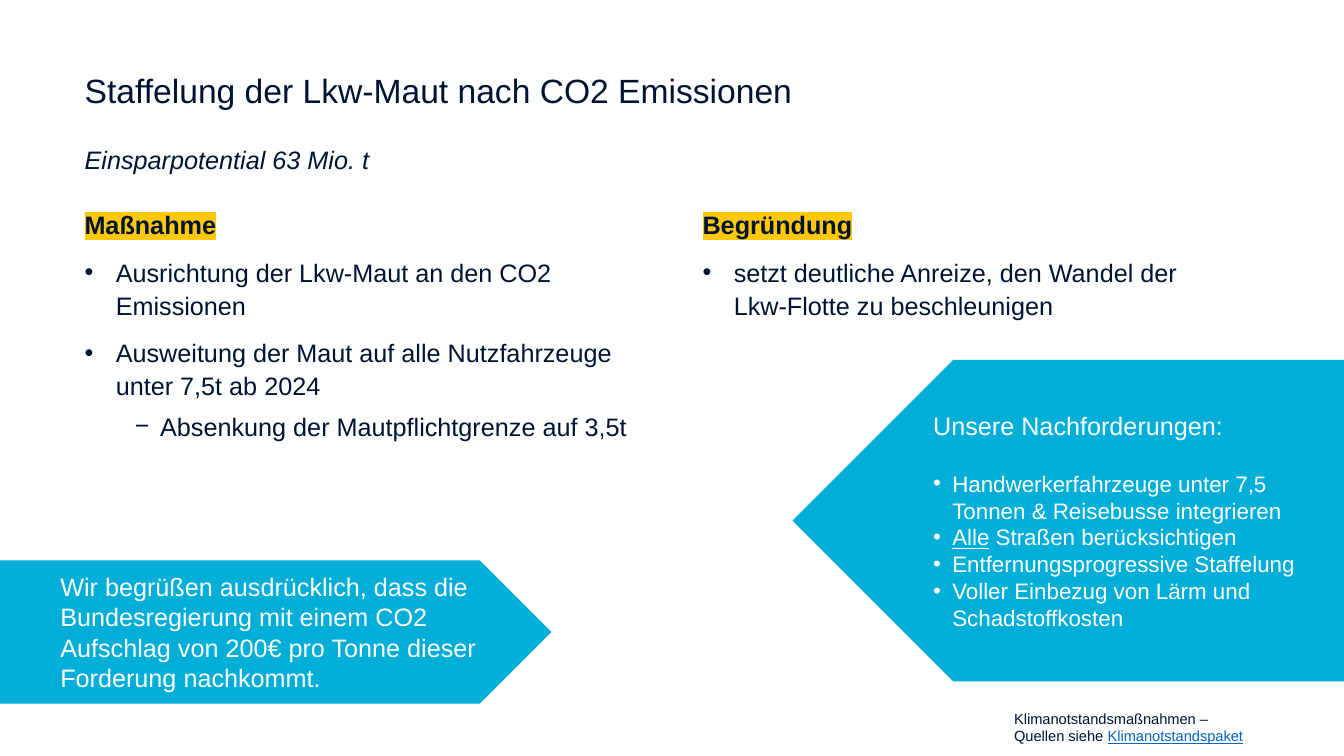
import pptx
import pptx.util
import pptx.dml.color
import pptx.enum.shapes
import pptx.enum.text
import pptx.oxml.ns
from lxml import etree

Inches = pptx.util.Inches
Pt = pptx.util.Pt
RGBColor = pptx.dml.color.RGBColor
qn = pptx.oxml.ns.qn

PAPER = RGBColor(0xFE, 0xFF, 0xFF)
NAVY = RGBColor(0x00, 0x14, 0x32)
CYAN = RGBColor(0x00, 0xAE, 0xD7)
YELLOW = RGBColor(0xFF, 0xC8, 0x0C)
LINK_BLUE = RGBColor(0x05, 0x63, 0xC1)


def apply_format(target, values):
    """Set each attribute of a dict of format values."""
    for name, value in values.items():
        setattr(target, name, value)


def add_run(paragraph, text, size, color, highlight=None, **styles):
    """Append a formatted run, optionally highlighted."""
    run = paragraph.add_run()
    run.text = text
    apply_format(run.font, {"name": "Arial", "size": Pt(size), **styles})
    run.font.color.rgb = color
    if highlight is not None:
        marker = etree.Element(qn("a:highlight"))
        etree.SubElement(marker, qn("a:srgbClr")).set("val", str(highlight))
        run.font.fill._xPr.find(qn("a:solidFill")).addnext(marker)


def next_paragraph(frame, first=False, margin=0, hanging=0, bullet=None, **spacing):
    """Return a left-aligned paragraph with indents, bullet and spacing."""
    paragraph = frame.paragraphs[0] if first else frame.add_paragraph()
    properties = paragraph._p.get_or_add_pPr()
    properties.set("marL", str(Inches(margin)))
    properties.set("indent", str(-Inches(hanging)))
    if bullet:
        etree.SubElement(properties, qn("a:buFont")).set("typeface", "Arial")
        etree.SubElement(properties, qn("a:buChar")).set("char", bullet)
    apply_format(paragraph, {"alignment": pptx.enum.text.PP_ALIGN.LEFT, **spacing})
    return paragraph


def prepare_frame(shape, anchor=pptx.enum.text.MSO_ANCHOR.TOP):
    """Wrap and anchor the text of a shape and return its frame."""
    frame = shape.text_frame
    apply_format(frame, {
        "word_wrap": True,
        "auto_size": pptx.enum.text.MSO_AUTO_SIZE.NONE,
        "vertical_anchor": anchor,
        "margin_left": Inches(0.1), "margin_right": Inches(0.1),
        "margin_top": Inches(0.05), "margin_bottom": Inches(0.05),
    })
    return frame


def add_heading(slide, box, heading, subheading):
    """Place the title with its italic second line."""
    title = slide.shapes.title
    apply_format(title, dict(zip(("left", "top", "width", "height"), map(Inches, box))))
    frame = prepare_frame(title)
    add_run(next_paragraph(frame, first=True, line_spacing=0.9), heading, 24, NAVY)
    potential = next_paragraph(frame, line_spacing=0.9, space_before=Pt(26))
    add_run(potential, subheading, 18, NAVY, italic=True)


def add_column(slide, box, heading, points):
    """Place a highlighted heading over its bullets of one or two levels."""
    frame = prepare_frame(slide.shapes.add_textbox(*map(Inches, box)))
    header = next_paragraph(frame, first=True, line_spacing=1.1)
    add_run(header, heading, 18, NAVY, YELLOW, bold=True)
    levels = [
        {"margin": 0.31, "hanging": 0.31, "bullet": "•", "space_before": Pt(10)},
        {"margin": 0.75, "hanging": 0.25, "bullet": "−", "space_before": Pt(5)},
    ]
    for level, text in points:
        point = next_paragraph(frame, level=level, line_spacing=1.1, **levels[level])
        add_run(point, text, 18, NAVY)


def add_arrow(slide, box, flipped=False):
    """Place a cyan pentagon arrow and return its text frame."""
    arrow = slide.shapes.add_shape(
        pptx.enum.shapes.MSO_SHAPE.PENTAGON, *map(Inches, box))
    arrow.shadow.inherit = False
    arrow.fill.solid()
    arrow.fill.fore_color.rgb = CYAN
    arrow.line.fill.background()
    if flipped:
        arrow._element.spPr.find(qn("a:xfrm")).set("flipH", "1")
    return prepare_frame(arrow, pptx.enum.text.MSO_ANCHOR.MIDDLE)


def add_approval(slide, box, statement):
    """Place the right-pointing arrow with its statement."""
    frame = add_arrow(slide, box)
    add_run(next_paragraph(frame, first=True, margin=0.5, level=1), statement, 18, PAPER)


def add_demands(slide, box, heading, demands):
    """Place the left-pointing arrow with a heading and bulleted demands."""
    frame = add_arrow(slide, box, flipped=True)
    add_run(next_paragraph(frame, first=True, margin=0.5, level=1), heading, 18, PAPER)
    for index, (stressed, text) in enumerate(demands):
        demand = next_paragraph(frame, margin=0.69, hanging=0.19, bullet="•",
                                level=1, space_before=Pt(0 if index else 21))
        if stressed:
            add_run(demand, stressed, 16, PAPER, underline=True)
        add_run(demand, text, 16, PAPER)


def add_sources(slide, box, subject, lead, source):
    """Place the two-line source note."""
    frame = prepare_frame(slide.shapes.add_textbox(*map(Inches, box)))
    add_run(next_paragraph(frame, first=True), subject, 10.5, NAVY)
    reference = next_paragraph(frame)
    add_run(reference, lead, 10.5, NAVY)
    add_run(reference, source, 10.5, LINK_BLUE, underline=True)


def main():
    """Build and save the toll slide."""
    deck = pptx.Presentation()
    deck.slide_width, deck.slide_height = Inches(13.33), Inches(7.5)
    slide = deck.slides.add_slide(deck.slide_layouts[5])
    slide.background.fill.solid()
    slide.background.fill.fore_color.rgb = PAPER

    add_heading(slide, (0.74, 0.69, 9.04, 0.5),
                "Staffelung der Lkw-Maut nach CO2 Emissionen",
                "Einsparpotential 63 Mio. t")
    add_column(slide, (0.74, 2, 5.71, 4.76), "Maßnahme", [
        (0, "Ausrichtung der Lkw-Maut an den CO2 Emissionen"),
        (0, "Ausweitung der Maut auf alle Nutzfahrzeuge unter 7,5t ab 2024"),
        (1, "Absenkung der Mautpflichtgrenze auf 3,5t"),
    ])
    add_column(slide, (6.87, 2, 5.47, 4.76), "Begründung", [
        (0, "setzt deutliche Anreize, den Wandel der Lkw-Flotte zu beschleunigen"),
    ])
    add_sources(slide, (9.96, 6.99, 3.3, 0.47), "Klimanotstandsmaßnahmen –",
                "Quellen siehe ", "Klimanotstandspaket")
    add_approval(slide, (0, 5.56, 5.47, 1.42),
                 "Wir begrüßen ausdrücklich, dass die Bundesregierung mit einem CO2 "
                 "Aufschlag von 200€ pro Tonne dieser Forderung nachkommt.")
    add_demands(slide, (7.86, 3.57, 5.47, 3.19), "Unsere Nachforderungen:", [
        ("", "Handwerkerfahrzeuge unter 7,5 Tonnen & Reisebusse integrieren"),
        ("Alle", " Straßen berücksichtigen"),
        ("", "Entfernungsprogressive Staffelung"),
        ("", "Voller Einbezug von Lärm und Schadstoffkosten"),
    ])
    deck.save("out.pptx")


if __name__ == "__main__":
    main()
